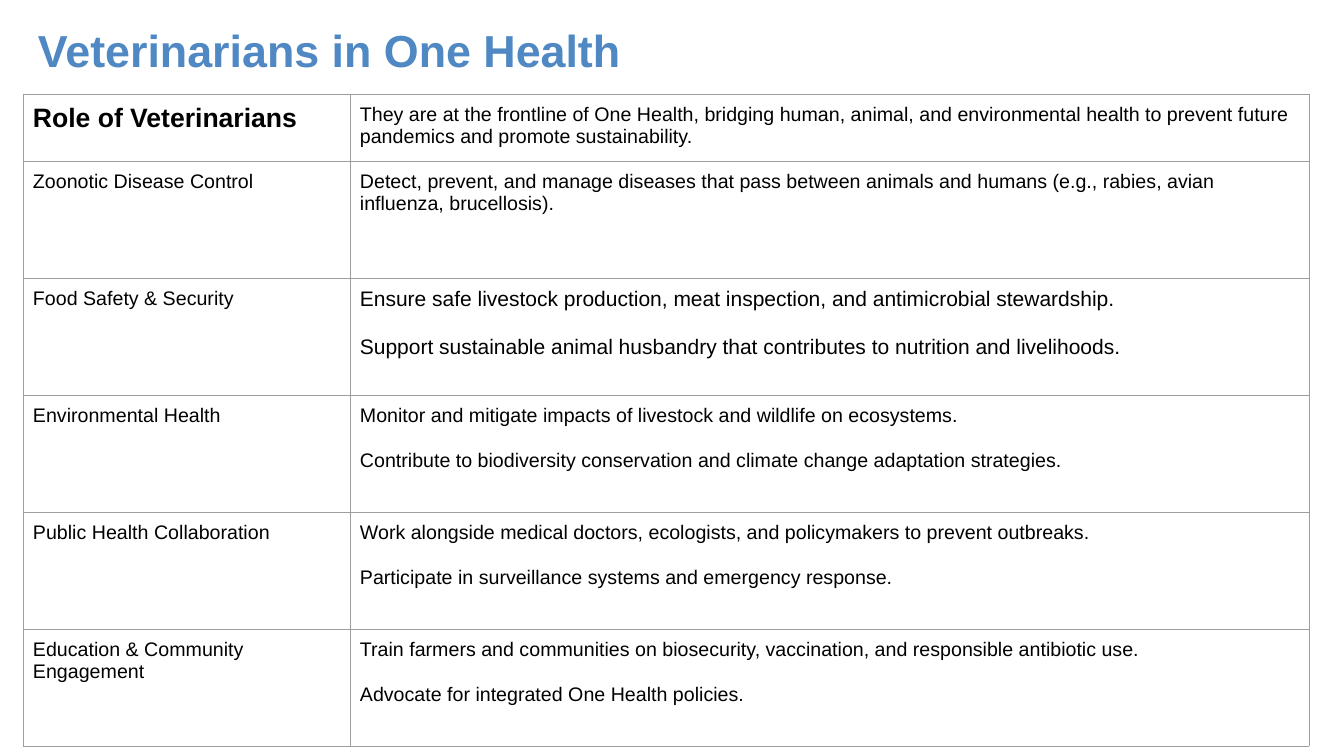
from dataclasses import dataclass

from lxml import etree
from pptx import Presentation
from pptx.dml.color import RGBColor
from pptx.enum.text import MSO_ANCHOR
from pptx.oxml.ns import qn
from pptx.util import Pt

MIDDLE, TOP = MSO_ANCHOR.MIDDLE, MSO_ANCHOR.TOP

# Content: role, paragraphs about it
TITLE = "Veterinarians in One Health"
ROLES = [
    ("Role of Veterinarians", [
        "They are at the frontline of One Health, bridging human, animal, and "
        "environmental health to prevent future pandemics and promote sustainability."]),
    ("Zoonotic Disease Control", [
        "Detect, prevent, and manage diseases that pass between animals and humans "
        "(e.g., rabies, avian influenza, brucellosis)."]),
    ("Food Safety & Security", [
        "Ensure safe livestock production, meat inspection, and antimicrobial stewardship.",
        "Support sustainable animal husbandry that contributes to nutrition and livelihoods."]),
    ("Environmental Health", [
        "Monitor and mitigate impacts of livestock and wildlife on ecosystems.",
        "Contribute to biodiversity conservation and climate change adaptation strategies."]),
    ("Public Health Collaboration", [
        "Work alongside medical doctors, ecologists, and policymakers to prevent outbreaks.",
        "Participate in surveillance systems and emergency response."]),
    ("Education & Community Engagement", [
        "Train farmers and communities on biosecurity, vaccination, and responsible antibiotic use.",
        "Advocate for integrated One Health policies."]),
]
FOOD_ROW = 2


@dataclass(frozen=True)
class Theme:
    font: str = "Arial"
    blue: str = "4F88C2"
    black: str = "000000"
    border: str = "9E9E9E"
    title: int = 32
    heading: int = 19
    body: int = 14
    food: int = 15
    line: float = 0.75
    leading: float = 1.15


T = Theme()

# Layout in px, 100.8 to the inch
SLIDE_W, SLIDE_H = 1344, 756
TITLE_BOX = (38, 0, 1048, 107)
TABLE_X, TABLE_Y = 23, 94
COL_WIDTHS = (327, 959)
HEAD_H, ROW_H = 66, 117
CELL_PAD = 10


def px(n):
    return round(n * 914400 / 100.8)


def set_font(p, size, color, bold=False):
    f = p.font
    f.name, f.size, f.bold = T.font, Pt(size), bold
    f.color.rgb = RGBColor.from_string(color)


def set_margins(box, left, top, right, bottom):
    box.margin_left, box.margin_top = px(left), px(top)
    box.margin_right, box.margin_bottom = px(right), px(bottom)


def set_borders(cell):
    tcPr = cell._tc.get_or_add_tcPr()
    for side in ("a:lnL", "a:lnR", "a:lnT", "a:lnB"):
        ln = etree.SubElement(tcPr, qn(side), w=str(Pt(T.line)))
        fill = etree.SubElement(ln, qn("a:solidFill"))
        etree.SubElement(fill, qn("a:srgbClr"), val=T.border)


def fill_cell(cell, lines, size, bold=False):
    set_borders(cell)
    cell.fill.background()
    cell.vertical_anchor = TOP
    set_margins(cell, *[CELL_PAD] * 4)
    tf = cell.text_frame
    for i, line in enumerate(lines):
        p = tf.add_paragraph() if i else tf.paragraphs[0]
        p.text = line
        set_font(p, size, T.black, bold)
        if i:  # one blank line's height between paragraphs
            p.space_before = Pt(size * T.leading)


def add_title(s):
    tf = s.shapes.add_textbox(*map(px, TITLE_BOX)).text_frame
    tf.word_wrap = True
    tf.vertical_anchor = MIDDLE
    set_margins(tf, 0, 4, 7, 4)
    p = tf.paragraphs[0]
    p.text = TITLE
    p.line_spacing = 0.9
    set_font(p, T.title, T.blue, True)


def add_roles(s):
    heights = [HEAD_H] + [ROW_H] * (len(ROLES) - 1)
    box = (TABLE_X, TABLE_Y, sum(COL_WIDTHS), sum(heights))
    table = s.shapes.add_table(len(ROLES), len(COL_WIDTHS), *map(px, box)).table
    table.first_row = table.horz_banding = False
    for col, width in zip(table.columns, COL_WIDTHS):
        col.width = px(width)
    for i, (role, lines) in enumerate(ROLES):
        table.rows[i].height = px(heights[i])
        head = i == 0
        fill_cell(table.cell(i, 0), [role], T.heading if head else T.body, head)
        fill_cell(table.cell(i, 1), lines, T.food if i == FOOD_ROW else T.body)


def main():
    prs = Presentation()
    prs.slide_width, prs.slide_height = px(SLIDE_W), px(SLIDE_H)
    s = prs.slides.add_slide(prs.slide_layouts[6])
    add_title(s)
    add_roles(s)
    prs.save("out.pptx")


if __name__ == "__main__":
    main()
